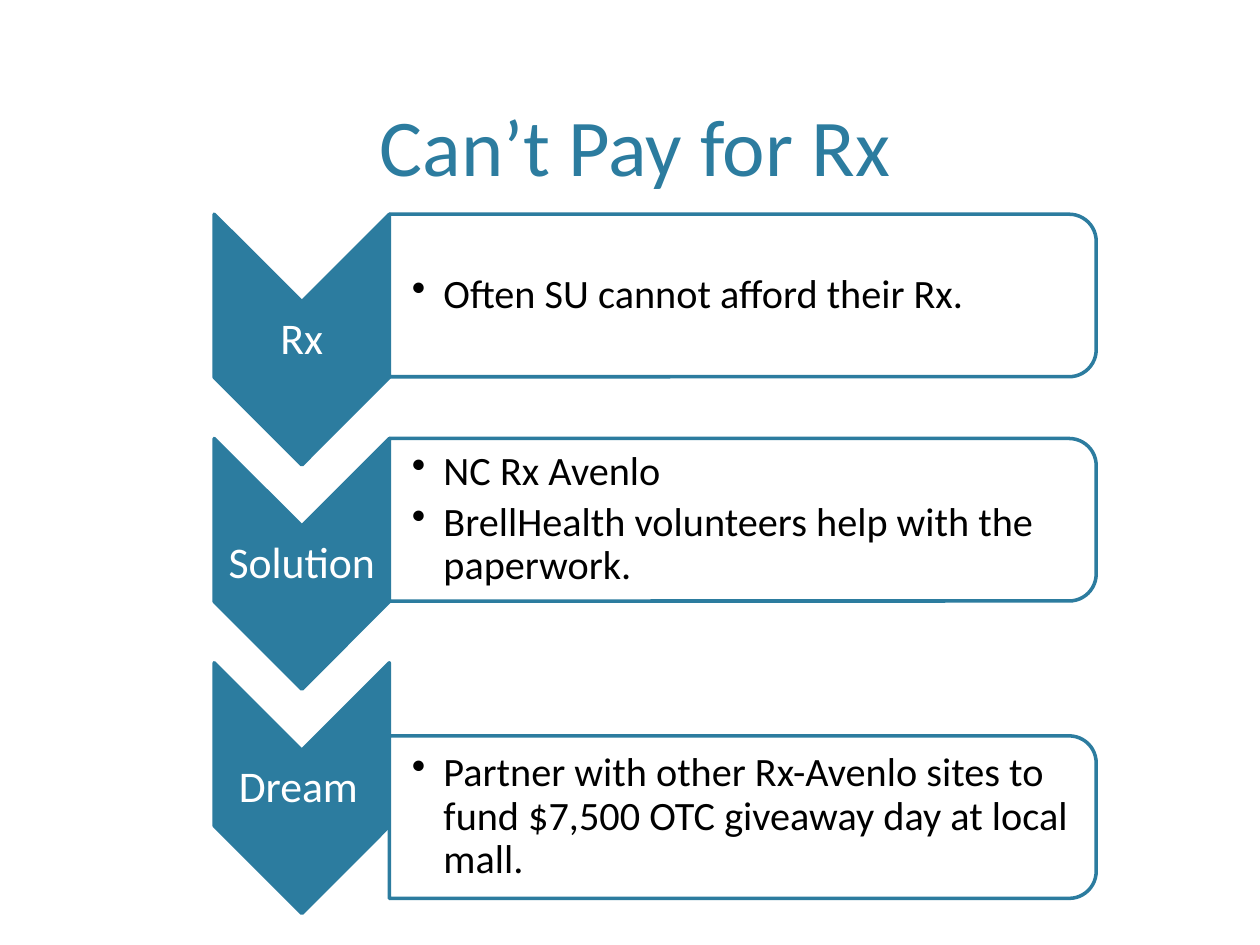
from lxml import etree
from pptx import Presentation
from pptx.dml.color import RGBColor
from pptx.enum.shapes import MSO_SHAPE
from pptx.enum.text import MSO_ANCHOR, PP_ALIGN
from pptx.oxml.ns import qn
from pptx.util import Inches, Pt

CHEVRON = MSO_SHAPE.CHEVRON
ROUND_TOP = MSO_SHAPE.ROUND_2_SAME_RECTANGLE
CENTER = PP_ALIGN.CENTER
BOTTOM, MIDDLE = MSO_ANCHOR.BOTTOM, MSO_ANCHOR.MIDDLE

FONT = "Calibri"
TEAL, WHITE, BLACK = "2C7C9F", "FFFFFF", "000000"

# Label, list items, top of the chevron's upright box, top of the panel
STEPS = [
    ("Rx", ["Often SU cannot afford their Rx."], 1.7, 1.7),
    ("Solution", ["NC Rx Avenlo",
                  "BrellHealth volunteers help with the paperwork."], 3.48, 3.48),
    ("Dream\t", ["Partner with other Rx-Avenlo sites to fund $7,500 OTC "
                 "giveaway day at local mall."], 5.26, 5.84),
]
CHEVRON_X, CHEVRON_W, CHEVRON_H = 1.7, 1.39, 1.99
PANEL_X, PANEL_W, PANEL_H = 3.09, 5.61, 1.29


def rgb(value):
    return RGBColor.from_string(value)


class SlideBuilder:
    def __init__(self, slide):
        self.s = slide

    def style_text(self, p, size, color):
        for r in p.runs:
            r.font.name = FONT
            r.font.size = Pt(size)
            r.font.color.rgb = rgb(color)

    def title(self, text, x, y, w, h):
        sp = self.s.shapes.title
        sp.left, sp.top, sp.width, sp.height = map(Inches, (x, y, w, h))
        tf = sp.text_frame
        tf.text = text
        tf.vertical_anchor = BOTTOM
        tf.paragraphs[0].alignment = CENTER
        self.style_text(tf.paragraphs[0], 46, TEAL)

    def turned_shape(self, kind, x, y, w, h, fill):
        """Place a shape turned by 90 degrees so that it covers x, y, w, h."""
        shift = (w - h) / 2
        sp = self.s.shapes.add_shape(kind, Inches(x + shift), Inches(y - shift),
                                     Inches(h), Inches(w))
        sp.rotation = 90
        sp.shadow.inherit = False
        sp.fill.solid()
        sp.fill.fore_color.rgb = rgb(fill)
        sp.line.color.rgb = rgb(TEAL)
        sp.line.width = Pt(2)
        return sp

    def text_box(self, x, y, w, h, left_inset):
        sp = self.s.shapes.add_textbox(*map(Inches, (x, y, w, h)))
        tf = sp.text_frame
        tf.word_wrap = True
        tf.vertical_anchor = MIDDLE
        tf.margin_left = Inches(left_inset)
        tf.margin_top = tf.margin_right = tf.margin_bottom = Inches(0.02)
        return tf

    def label(self, text, x, y, w, h):
        tf = self.text_box(x, y, w, h, 0.02)
        tf.text = text
        p = tf.paragraphs[0]
        p.alignment = CENTER
        p.line_spacing = 0.9
        self.style_text(p, 25, WHITE)

    def bullets(self, items, x, y, w, h):
        tf = self.text_box(x, y, w, h, 0.18)
        tf.text = "\n".join(items)
        for p in tf.paragraphs:
            p.line_spacing = 0.9
            p.space_after = Pt(4)
            pPr = p._p.get_or_add_pPr()
            pPr.set("marL", str(Inches(0.25)))
            pPr.set("indent", str(-Inches(0.25)))
            etree.SubElement(pPr, qn("a:buChar")).set("char", "•")
            self.style_text(p, 23, BLACK)


def main():
    prs = Presentation()
    prs.slide_width, prs.slide_height = Inches(10), Inches(7.5)
    b = SlideBuilder(prs.slides.add_slide(prs.slide_layouts[5]))

    b.title("Can’t Pay for Rx", 0.5, 0.33, 9.08, 1.25)

    # Each step: chevron with its label, then panel with its list
    for name, items, chevron_y, panel_y in STEPS:
        b.turned_shape(CHEVRON, CHEVRON_X, chevron_y, CHEVRON_W, CHEVRON_H, TEAL)
        b.label(name, CHEVRON_X, chevron_y + 0.7, CHEVRON_W, 0.6)
        b.turned_shape(ROUND_TOP, PANEL_X, panel_y, PANEL_W, PANEL_H, WHITE)
        b.bullets(items, PANEL_X, panel_y + 0.06, 5.54, 1.17)

    prs.save("out.pptx")


if __name__ == "__main__":
    main()
